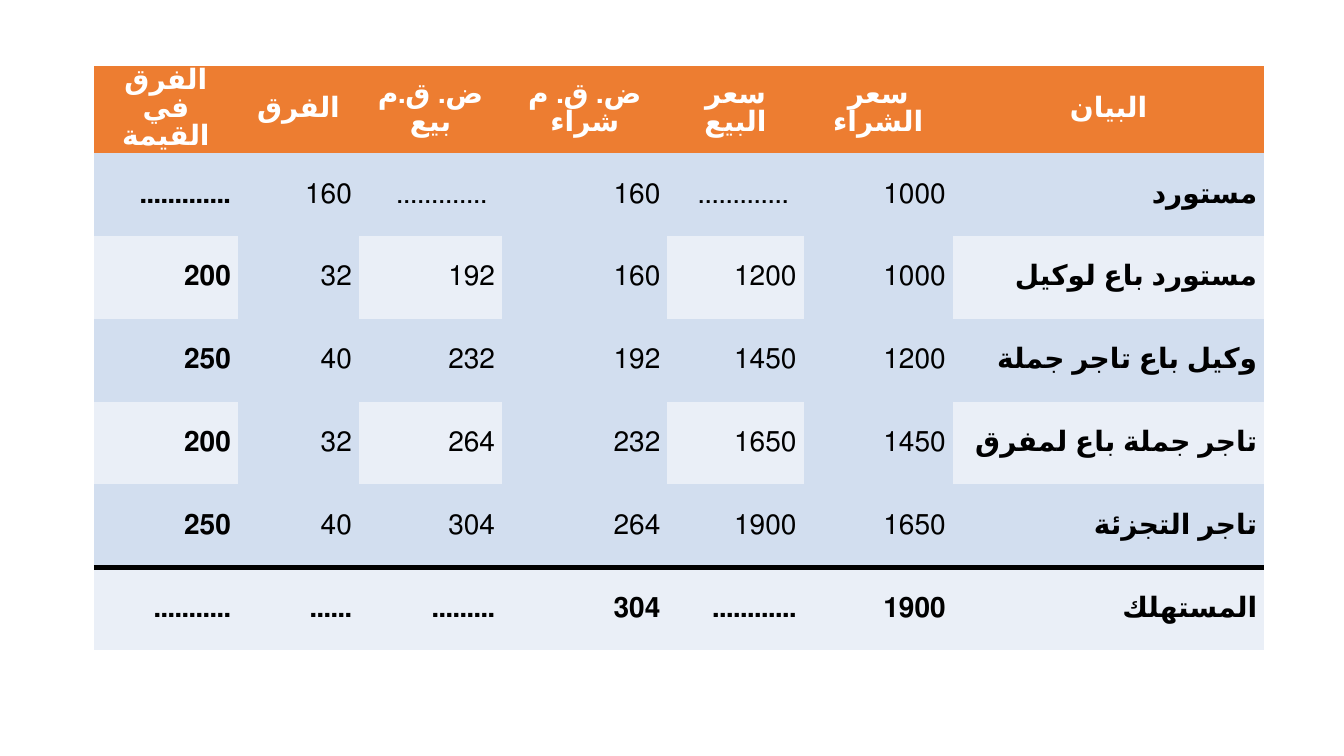
"""Build a slide with a right-to-left table of value added tax through the supply chain."""
from lxml import etree
from pptx import Presentation, util as u
from pptx.dml.color import RGBColor
from pptx.enum import lang, text
from pptx.oxml import ns

HEADINGS = ["الفرق في القيمة", "الفرق", "ض. ق.م بيع", "ض. ق. م شراء",
            "سعر البيع", "سعر الشراء", "البيان"]
STAGES = [
    [".............\u00a0", "160", "\u00a0.............", "160", "\u00a0.............", "1000", "مستورد"],
    ["200", "32", "192", "160", "1200", "1000", "مستورد باع لوكيل"],
    ["250", "40", "232", "192", "1450", "1200", "وكيل باع تاجر جملة"],
    ["200", "32", "264", "232", "1650", "1450", "تاجر جملة باع لمفرق"],
    ["250", "40", "304", "264", "1900", "1650", "تاجر التجزئة"],
]
CONSUMER = ["...........", "......", ".........", "304", "............", "1900", "المستهلك"]
GRID = [HEADINGS, *STAGES, CONSUMER]
LAST_ROW, LAST_COLUMN = len(GRID) - 1, len(HEADINGS) - 1
COLUMN_WIDTHS = [1.43, 1.2, 1.42, 1.64, 1.35, 1.48, 3.09]
LEFT, TOP, HEIGHT, HEADING_HEIGHT = 0.93, 0.65, 5.8, 0.87
ROW_HEIGHTS = [HEADING_HEIGHT] + [(HEIGHT - HEADING_HEIGHT) / LAST_ROW] * LAST_ROW
ORANGE, BLUE, PALE, WHITE, BLACK = "ED7D31", "D2DEEF", "EAEFF7", "FFFFFF", "000000"
PLAIN_STYLE = "{2D5ABB26-0587-4C30-8999-92F81FD0307C}"
CELL_FORMAT = {"margin_left": u.Inches(0.07), "margin_right": u.Inches(0.07),
               "margin_top": 0, "margin_bottom": 0,
               "vertical_anchor": text.MSO_ANCHOR.MIDDLE}


def paint(target, color):
    target.solid()
    target.fore_color.rgb = RGBColor.from_string(color)


def apply(target, values):
    for key, value in values.items():
        setattr(target, key, value)


def band(row, column):
    if row == 0:
        return ORANGE
    return PALE if row == LAST_ROW or (row % 2 == 0 and column % 2 == 0) else BLUE


def rule_above(cell):
    line = etree.Element(ns.qn("a:lnT"), w=str(u.Pt(4)))
    fill = etree.SubElement(line, ns.qn("a:solidFill"))
    etree.SubElement(fill, ns.qn("a:srgbClr"), val=BLACK)
    cell._tc.get_or_add_tcPr().insert(0, line)


def write(cell, words, row, column):
    apply(cell, CELL_FORMAT)
    paint(cell.fill, band(row, column))
    cell.text = words
    paragraph = cell.text_frame.paragraphs[0]
    paragraph.alignment = text.PP_ALIGN.RIGHT if row else text.PP_ALIGN.CENTER
    paragraph._p.get_or_add_pPr().set("rtl", "1")
    font = paragraph.runs[0].font
    apply(font, {
        "size": u.Pt(20),
        "bold": row in (0, LAST_ROW) or column in (0, LAST_COLUMN),
        "name": "Times New Roman" if (row, column) == (LAST_ROW, 0) else "Calibri",
        "language_id": lang.MSO_LANGUAGE_ID.ARABIC,
    })
    paint(font.fill, BLACK if row else WHITE)
    if row == LAST_ROW:
        rule_above(cell)


def main():
    deck = Presentation()
    apply(deck, {"slide_width": u.Inches(13.33), "slide_height": u.Inches(7.5)})
    slide = deck.slides.add_slide(deck.slide_layouts[6])
    frame = slide.shapes.add_table(
        len(GRID), len(HEADINGS), u.Inches(LEFT), u.Inches(TOP),
        u.Inches(sum(COLUMN_WIDTHS)), u.Inches(HEIGHT))
    tax = frame.table
    tax.horz_banding = False
    tax._tbl.tblPr.find(ns.qn("a:tableStyleId")).text = PLAIN_STYLE
    for column, width in zip(tax.columns, COLUMN_WIDTHS):
        column.width = u.Inches(width)
    for row, height in zip(tax.rows, ROW_HEIGHTS):
        row.height = u.Inches(height)
    for r, entries in enumerate(GRID):
        for c, words in enumerate(entries):
            write(tax.cell(r, c), words, r, c)
    deck.save("out.pptx")


if __name__ == "__main__":
    main()
